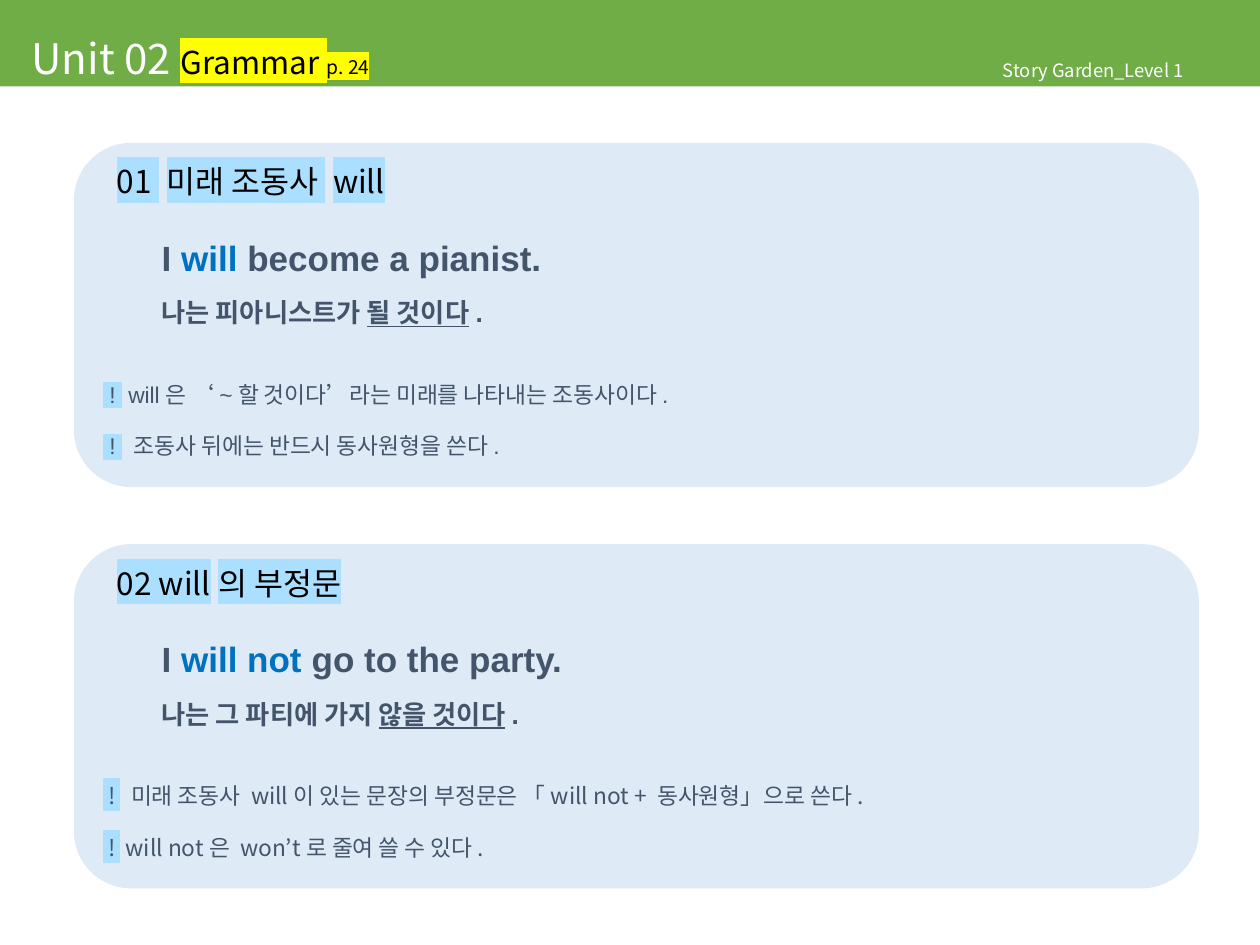
from lxml import etree
from pptx import Presentation
from pptx import util as u
from pptx.dml.color import RGBColor
from pptx.enum import shapes, text
from pptx.oxml import ns

NOTO = "Noto Sans CJK KR"
ARIAL = "Arial"
SLATE = "44546A"
SKY = "ABDFFF"


def colour(value):
    return RGBColor.from_string(value)


def add_run(para, words, size, font, ink, mark=None, bold=False, underline=False):
    span = para.add_run()
    span.text = words
    span.font.size = u.Pt(size)
    span.font.bold = bold
    span.font.underline = underline
    span.font.color.rgb = colour(ink)
    span.font.name = font
    props = span.font._element
    east = etree.Element(ns.qn("a:ea"), typeface=NOTO)
    props.find(ns.qn("a:latin")).addnext(east)
    if mark:
        highlight = etree.Element(ns.qn("a:highlight"))
        etree.SubElement(highlight, ns.qn("a:srgbClr"), val=mark)
        props.find(ns.qn("a:solidFill")).addnext(highlight)


def set_frame(frame, anchor, left, top, right, bottom):
    frame.auto_size = text.MSO_AUTO_SIZE.NONE
    frame.word_wrap = True
    frame.vertical_anchor = anchor
    frame.margin_left, frame.margin_top = u.Cm(left), u.Cm(top)
    frame.margin_right, frame.margin_bottom = u.Cm(right), u.Cm(bottom)


def add_header(page, left, top, width, height):
    title = page.shapes.title
    title.left, title.top = u.Cm(left), u.Cm(top)
    title.width, title.height = u.Cm(width), u.Cm(height)
    title.fill.solid()
    title.fill.fore_color.rgb = colour("70AD47")
    set_frame(title.text_frame, text.MSO_ANCHOR.BOTTOM, 0.64, 0, 0.25, 0.06)
    para = title.text_frame.paragraphs[0]
    para.alignment = text.PP_ALIGN.LEFT
    para.line_spacing = 0.9
    add_run(para, "Unit 02 ", 24, NOTO, "FFFFFF")
    add_run(para, "Grammar ", 18, NOTO, "000000", "FFFF00")
    add_run(para, "p. 24", 11, NOTO, "000000", "FFFF00")

    box = page.shapes.add_textbox(u.Cm(left + 20.04), u.Cm(top + 1.14), u.Cm(4.9), u.Cm(0.66))
    set_frame(box.text_frame, text.MSO_ANCHOR.TOP, 0.18, 0.1, 0.18, 0.1)
    para = box.text_frame.paragraphs[0]
    para.line_spacing = 0.9
    add_run(para, "Story Garden_Level 1", 10.5, NOTO, "FFFFFF")


def add_line(frame, before, indent=0):
    para = frame.add_paragraph()
    para.alignment = text.PP_ALIGN.LEFT
    para.line_spacing = u.Pt(20)
    para.space_before = u.Pt(before)
    para._p.get_or_add_pPr().set("marL", str(u.Cm(indent)))
    return para


def add_card(page, left, top, width, height, card):
    box = page.shapes.add_shape(
        shapes.MSO_SHAPE.ROUNDED_RECTANGLE, u.Cm(left), u.Cm(top), u.Cm(width), u.Cm(height))
    box.adjustments[0] = 0.167
    box.shadow.inherit = False
    box.fill.solid()
    box.fill.fore_color.rgb = colour("DEEBF7")
    box.line.fill.background()
    frame = box.text_frame
    set_frame(frame, text.MSO_ANCHOR.TOP, 0.25, 0.13, 0.25, 0.13)

    heading = frame.paragraphs[0]
    heading.alignment = text.PP_ALIGN.LEFT
    heading.line_spacing = u.Pt(19.5)
    heading._p.get_or_add_pPr().set("marL", str(u.Cm(0.28)))
    add_run(heading, card["heading"], 18, NOTO, "000000", SKY)

    sentence = add_line(frame, 24.5, 1.18)
    for words, ink in zip(card["sentence"], (SLATE, "0070C0", SLATE)):
        add_run(sentence, words, 20, ARIAL, ink, bold=True)

    meaning = add_line(frame, 8.5, 1.18)
    for words, underline in zip(card["meaning"], (False, True, False)):
        add_run(meaning, words, 15, ARIAL, SLATE, bold=True, underline=underline)

    for before, note in zip((25.5, 9.5), card["notes"]):
        para = add_line(frame, before)
        add_run(para, " ! ", 13, card["font"], SLATE, SKY)
        add_run(para, " " + note, 13, card["font"], SLATE)


CARDS = [
    {
        "heading": "01 미래 조동사 will",
        "sentence": ("I ", "will", " become a pianist."),
        "meaning": ("나는 피아니스트가 ", "될 것이다", "."),
        "notes": ("will은 ‘~할 것이다’라는 미래를 나타내는 조동사이다.",
                  "조동사 뒤에는 반드시 동사원형을 쓴다."),
        "font": ARIAL,
    },
    {
        "heading": "02 will의 부정문",
        "sentence": ("I ", "will not", " go to the party."),
        "meaning": ("나는 그 파티에 가지 ", "않을 것이다", "."),
        "notes": ("미래 조동사 will이 있는 문장의 부정문은 「will not + 동사원형」으로 쓴다.",
                  "will not은 won’t로 줄여 쓸 수 있다."),
        "font": NOTO,
    },
]


def main():
    deck = Presentation()
    deck.slide_width, deck.slide_height = u.Cm(25.4), u.Cm(19.05)
    page = deck.slides.add_slide(deck.slide_layouts[5])
    add_header(page, 0, 0, 25.4, 1.74)
    for index, card in enumerate(CARDS):
        add_card(page, 1.49, 2.88 + index * 8.09, 22.68, 6.94, card)
    deck.save("out.pptx")


if __name__ == "__main__":
    main()
